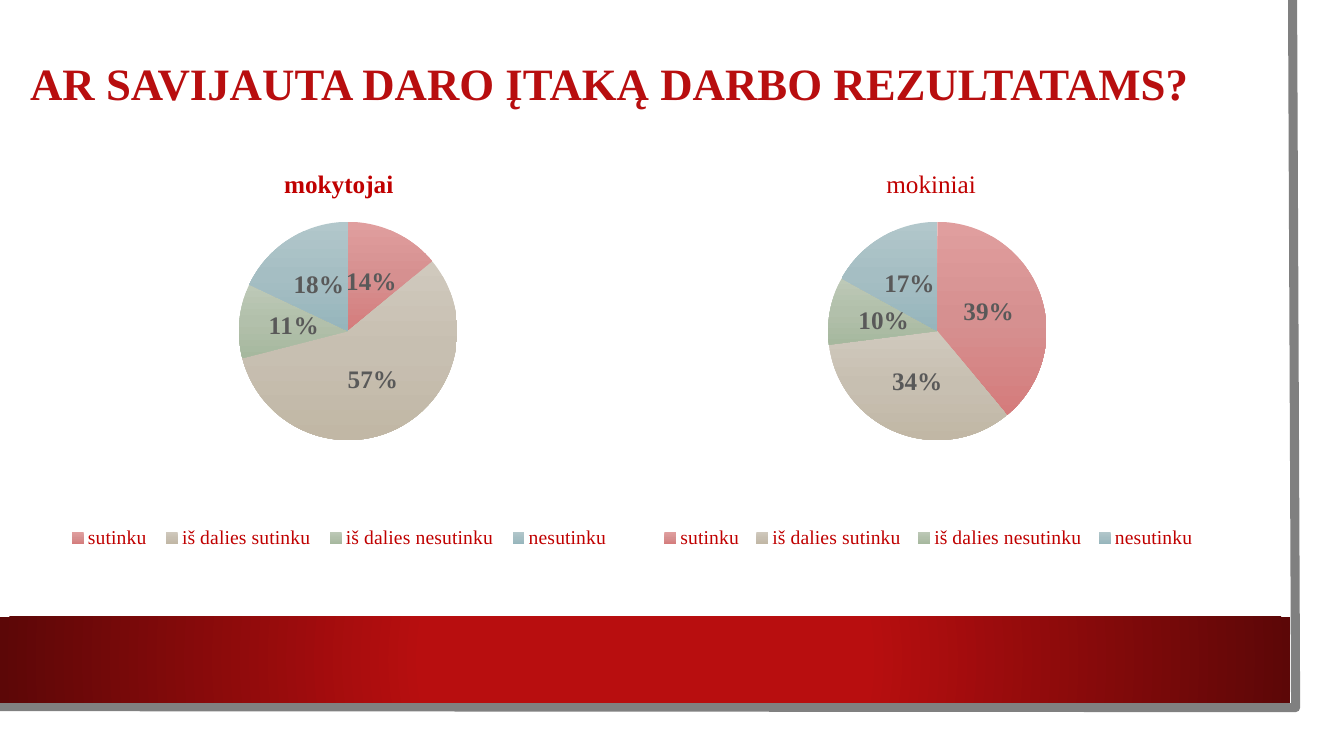
from lxml.etree import SubElement as Sub
from pptx import Presentation
from pptx.chart.data import CategoryChartData as Data
from pptx.dml.color import RGBColor as Rgb
from pptx.enum.chart import XL_CHART_TYPE as Kind, XL_LABEL_POSITION as Spot
from pptx.enum.chart import XL_LEGEND_POSITION as Side
from pptx.enum.shapes import MSO_SHAPE as Form
from pptx.enum.text import MSO_ANCHOR as Anchor
from pptx.oxml.ns import qn
from pptx.util import Inches, Pt

SLICES = [
    ("sutinku", ("E09E9E", "D69090", "D57C7C")),
    ("iš dalies sutinku", ("D0C9BD", "C7BFB1", "C1B7A5")),
    ("iš dalies nesutinku", ("BDC9B7", "B2C0AB", "A6B89E")),
    ("nesutinku", ("B2C7CB", "A5BEC3", "96B5BC")),
]


def tint(code):
    return Rgb.from_string(code)


class Deck:
    """Draws on one slide, in grid cells of a tenth of an inch."""

    face, red, wine, gray = "Times New Roman", "B80E0F", "C00000", "595959"

    def __init__(self):
        self.show = Presentation()
        self.show.slide_width, self.show.slide_height = self.grid(133.3, 75)
        self.slide = self.show.slides.add_slide(self.show.slide_layouts[6])
        self.shapes = self.slide.shapes

    def grid(self, *cells):
        return [Inches(cell / 10) for cell in cells]

    def style(self, font, size, color, bold=False):
        font.name, font.size, font.bold = self.face, Pt(size), bold
        font.color.rgb = tint(color)

    def blend(self, fill, stops, round=False):
        fill.gradient()
        grad = fill._xPr.find(qn("a:gradFill"))
        for child in list(grad):
            grad.remove(child)
        group = Sub(grad, qn("a:gsLst"))
        for share, color in stops:
            stop = Sub(group, qn("a:gs"), pos=str(share * 1000))
            Sub(stop, qn("a:srgbClr"), val=color)
        if round:
            ring = Sub(grad, qn("a:path"), {"path": "circle"})
            Sub(ring, qn("a:fillToRect"), dict.fromkeys("ltrb", "50000"))
        else:
            Sub(grad, qn("a:lin"), ang="5400000", scaled="0")

    def rect(self, *box):
        shape = self.shapes.add_shape(Form.RECTANGLE, *self.grid(*box))
        shape.shadow.inherit = False
        shape.line.fill.background()
        return shape

    def panel(self, color, *box):
        fill = self.rect(*box).fill
        fill.solid()
        fill.fore_color.rgb = tint(color)

    def band(self, stops, *box):
        self.blend(self.rect(*box).fill, stops, round=True)

    def edge(self, color, width, start, *points):
        pen = self.shapes.build_freeform(*self.grid(*start))
        pen.add_line_segments([self.grid(*point) for point in points], close=False)
        shape = pen.convert_to_shape()
        shape.shadow.inherit = False
        shape.fill.background()
        shape.line.color.rgb = tint(color)
        shape.line.width = Pt(width)

    def head(self, text, *box):
        frame = self.shapes.add_textbox(*self.grid(*box)).text_frame
        frame.word_wrap = True
        frame.vertical_anchor = Anchor.MIDDLE
        para = frame.paragraphs[0]
        para.text = text
        para.line_spacing = 0.9
        self.style(para.font, 32, self.red, True)

    def place(self, part, inner=False, **spots):
        layout = part.find(qn("c:layout"))
        if layout is None:
            layout = part.makeelement(qn("c:layout"), {})
            part.find(qn("c:overlay")).addprevious(layout)
        for child in list(layout):
            layout.remove(child)
        manual = Sub(layout, qn("c:manualLayout"))
        if inner:
            Sub(manual, qn("c:layoutTarget"), val="inner")
        for mode in ("xMode", "yMode"):
            Sub(manual, qn(f"c:{mode}"), val="edge")
        for key, share in spots.items():
            Sub(manual, qn(f"c:{key}"), val=str(share))

    def pie(self, name, values, bold, left, *box):
        data = Data()
        data.categories = [label for label, _ in SLICES]
        data.add_series(name, values)
        chart = self.shapes.add_chart(Kind.PIE, *self.grid(*box), data).chart
        chart.font.name, chart.font.size = "Arial Narrow", Pt(10)

        chart.has_title = True
        title = chart.chart_title
        title.include_in_layout = False
        para = title.text_frame.paragraphs[0]
        para.text = name
        self.style(para.font, 18, self.wine, bold)
        self.place(title._element, x=left, y=0.04)

        chart.has_legend = True
        legend = chart.legend
        legend.position = Side.BOTTOM
        legend.include_in_layout = True
        self.style(legend.font, 14, self.wine)
        self.place(legend._element, x=0.03, y=0.84, w=0.94, h=0.08)

        plot = chart.plots[0]
        plot.vary_by_categories = True
        area = chart._chartSpace.chart.plotArea
        if area.find(qn("c:layout")) is None:
            area.insert(0, area.makeelement(qn("c:layout"), {}))
        self.place(area, True, x=0.03, y=0.17, w=0.97, h=0.49)

        for spot, (_, colors) in enumerate(SLICES):
            look = plot.series[0].points[spot].format
            self.blend(look.fill, zip((0, 50, 100), colors))
            look.line.fill.background()

        plot.has_data_labels = True
        labels = plot.data_labels
        labels.show_percentage, labels.show_value = True, False
        labels.number_format, labels.number_format_is_linked = "0%", False
        labels.position = Spot.CENTER
        self.style(labels.font, 18, self.gray, True)


def main():
    deck = Deck()
    deck.panel("FFFFFF", 0, 0, 131, 72.7)
    deck.edge("808080", 6.5, (128.2, 0), (128.5, 70.2), (-0.3, 70.1))
    deck.band([(34, "B80E0F"), (100, "5C0707")], 0, 61.2, 128, 8.5)
    deck.head("AR SAVIJAUTA DARO ĮTAKĄ DARBO REZULTATAMS?", 2, 2.5, 123.2, 12)
    deck.pie("mokytojai", (14, 57, 11, 18), True, 0.4, 4.1, 14.5, 59.1, 44.2)
    deck.pie("mokiniai", (39, 34, 10, 17), False, 0.42, 63.1, 14.5, 58, 44.2)
    deck.show.save("out.pptx")


if __name__ == "__main__":
    main()
